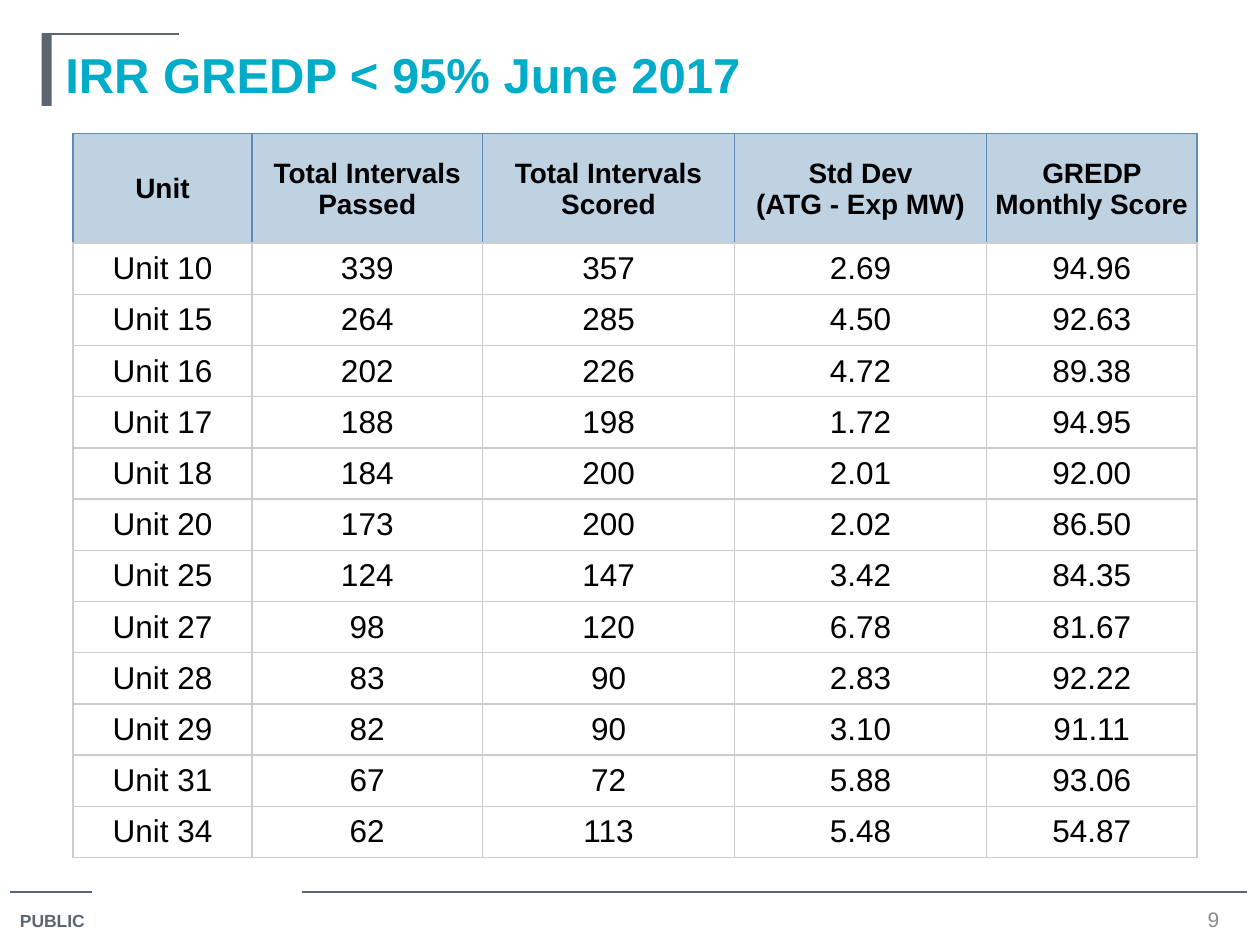
from lxml.etree import SubElement
from pptx import Presentation
from pptx.dml.color import RGBColor
from pptx.enum.shapes import MSO_CONNECTOR, MSO_SHAPE
from pptx.enum.text import MSO_ANCHOR as Anchor, PP_ALIGN as Align
from pptx.oxml.ns import qn
from pptx.util import Inches, Pt

SLATE = RGBColor(0x5B, 0x67, 0x70)
TEAL = RGBColor(0x00, 0xAC, 0xC8)
GREY = RGBColor(0x8C, 0x8C, 0x8C)
BLACK = RGBColor(0x00, 0x00, 0x00)
HEADER_FILL = RGBColor(0xBF, 0xD2, 0xE2)
HEADER_BORDER = RGBColor(0x60, 0x8B, 0xB4)
GRID = RGBColor(0xCC, 0xCC, 0xCC)

HEADERS = [
    "Unit",
    "Total Intervals Passed",
    "Total Intervals Scored",
    "Std Dev\n(ATG - Exp MW)",
    "GREDP Monthly Score",
]
UNITS = [
    ("Unit 10", "339", "357", "2.69", "94.96"),
    ("Unit 15", "264", "285", "4.50", "92.63"),
    ("Unit 16", "202", "226", "4.72", "89.38"),
    ("Unit 17", "188", "198", "1.72", "94.95"),
    ("Unit 18", "184", "200", "2.01", "92.00"),
    ("Unit 20", "173", "200", "2.02", "86.50"),
    ("Unit 25", "124", "147", "3.42", "84.35"),
    ("Unit 27", "98", "120", "6.78", "81.67"),
    ("Unit 28", "83", "90", "2.83", "92.22"),
    ("Unit 29", "82", "90", "3.10", "91.11"),
    ("Unit 31", "67", "72", "5.88", "93.06"),
    ("Unit 34", "62", "113", "5.48", "54.87"),
]
COLUMN_WIDTHS = [1.42, 1.83, 2, 2, 1.67]
TABLE_HEIGHT, HEADER_HEIGHT = 5.75, 0.87


def write(frame, text, size, color, bold=False, align=Align.LEFT):
    """Fill a text frame with one paragraph per line of text."""
    for index, line in enumerate(text.split("\n")):
        para = frame.add_paragraph() if index else frame.paragraphs[0]
        para.alignment = align
        span = para.add_run()
        span.text = line
        span.font.name = "Arial"
        span.font.size = Pt(size)
        span.font.bold = bold
        span.font.color.rgb = color


def set_border(cell, side, color):
    """Draw one cell edge; sides must be added in the order L, R, T, B."""
    edge = SubElement(cell._tc.get_or_add_tcPr(), qn(f"a:ln{side}"), w=str(Pt(1)))
    fill = SubElement(edge, qn("a:solidFill"))
    SubElement(fill, qn("a:srgbClr"), val=str(color))


deck = Presentation()
deck.slide_width, deck.slide_height = Inches(10), Inches(7.5)
page = deck.slides.add_slide(deck.slide_layouts[6])

# Footer rules and the rule above the title
for start, end, y in [(0.08, 0.73, 7.08), (2.4, 9.9, 7.08), (0.33, 1.42, 0.27)]:
    rule = page.shapes.add_connector(
        MSO_CONNECTOR.STRAIGHT, Inches(start), Inches(y), Inches(end), Inches(y))
    rule.line.color.rgb = SLATE
    rule.line.width = Pt(0.75)
    SubElement(rule._element.spPr, qn("a:effectLst"))

title_bar = page.shapes.add_shape(
    MSO_SHAPE.RECTANGLE, Inches(0.33), Inches(0.27), Inches(0.08), Inches(0.57))
title_bar.shadow.inherit = False
title_bar.fill.solid()
title_bar.fill.fore_color.rgb = SLATE
title_bar.line.fill.background()

title = page.shapes.add_textbox(Inches(0.42), Inches(0.27), Inches(9.25), Inches(0.78))
title.text_frame.word_wrap = True
title.text_frame.margin_top = Inches(0.08)
write(title.text_frame, "IRR GREDP < 95% June 2017", 28, TEAL, bold=True)

label = page.shapes.add_textbox(Inches(0.06), Inches(7.17), Inches(0.77), Inches(0.28))
write(label.text_frame, "PUBLIC", 10, SLATE, bold=True)

number = page.shapes.add_textbox(Inches(9.42), Inches(7.18), Inches(0.42), Inches(0.23))
number.text_frame.word_wrap = True
number.text_frame.vertical_anchor = Anchor.MIDDLE
write(number.text_frame, "9", 12, GREY, align=Align.CENTER)

# Score table
rows = [HEADERS] + UNITS
table = page.shapes.add_table(
    len(rows), len(HEADERS), Inches(0.58), Inches(1.06),
    Inches(sum(COLUMN_WIDTHS)), Inches(TABLE_HEIGHT)).table
table.horz_banding = False
for column, width in zip(table.columns, COLUMN_WIDTHS):
    column.width = Inches(width)

for row_index, values in enumerate(rows):
    is_header = row_index == 0
    row_height = HEADER_HEIGHT if is_header else (TABLE_HEIGHT - HEADER_HEIGHT) / len(UNITS)
    table.rows[row_index].height = Inches(row_height)
    for column_index, value in enumerate(values):
        cell = table.cell(row_index, column_index)
        cell.vertical_anchor = Anchor.MIDDLE
        inset = Inches(0.01 if is_header else 0)
        cell.margin_left = cell.margin_right = cell.margin_top = inset
        cell.margin_bottom = 0
        for side in "LRTB":
            set_border(cell, side, HEADER_BORDER if is_header and side != "B" else GRID)
        if is_header:
            cell.fill.solid()
            cell.fill.fore_color.rgb = HEADER_FILL
        else:
            cell.fill.background()
        write(cell.text_frame, value, 16 if is_header else 18, BLACK, is_header, Align.CENTER)

deck.save("out.pptx")
